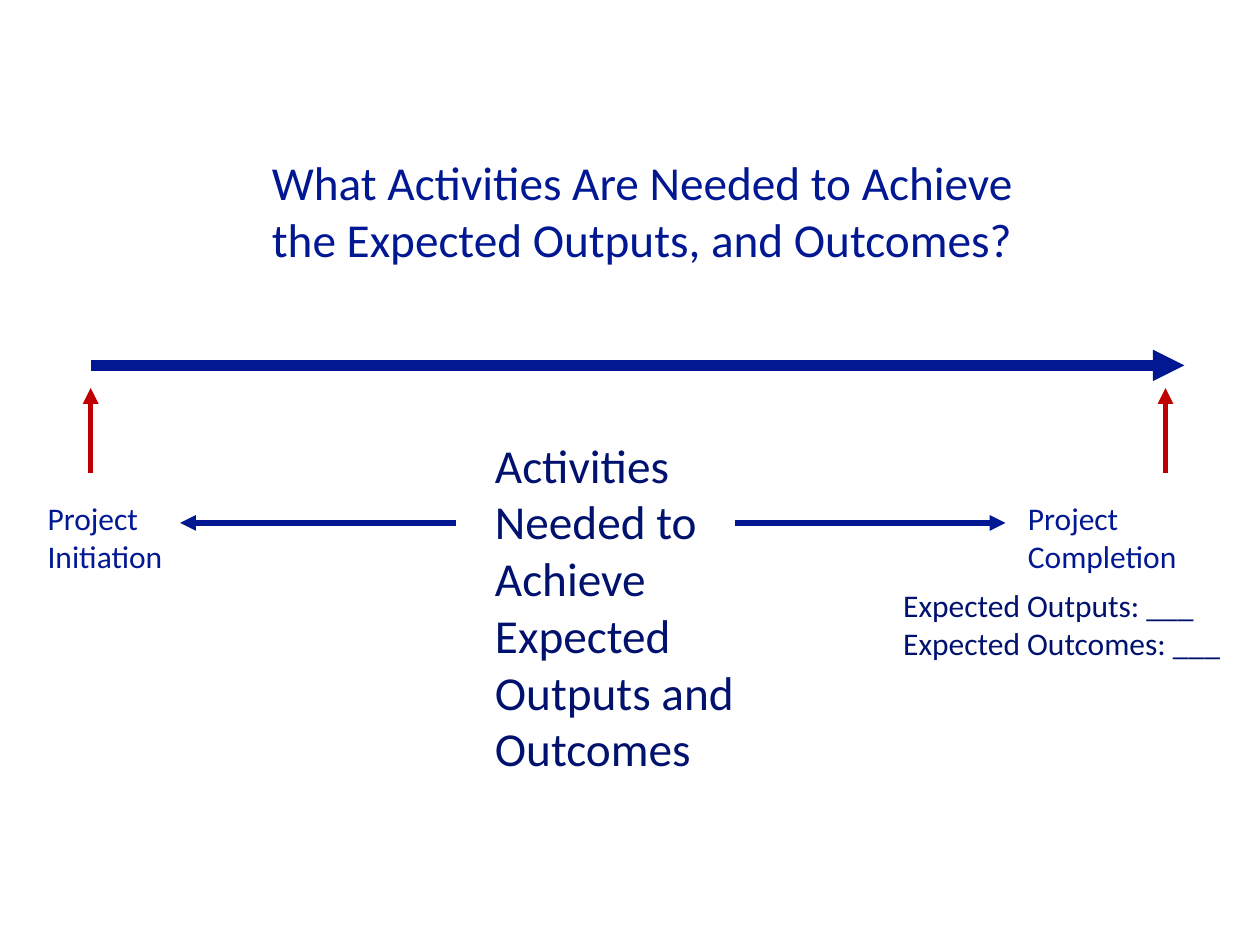
from dataclasses import dataclass

import lxml.etree
import pptx
import pptx.dml.color
import pptx.enum.shapes
import pptx.enum.text
import pptx.oxml.ns
import pptx.util

BLUE = "011892"
NAVY = "01126E"
RED = "C00000"

TIMELINE_Y = 208.8
SPAN_Y = 298.8
MARKER_BOTTOM, MARKER_TOP = 270, 221.76
START_X, COMPLETION_X = 51.84, 666
LABEL_TOP, LABEL_HEIGHT = 281.52, 51.12


@dataclass(frozen=True)
class Arrow:
    start: tuple[float, float]
    end: tuple[float, float]
    color: str = BLUE
    width: float = 3


@dataclass(frozen=True)
class Label:
    text: str
    left: float
    top: float
    width: float
    height: float
    size: float = 18
    color: str = BLUE


ARROWS = [
    Arrow((START_X, TIMELINE_Y), (676.8, TIMELINE_Y), width=6),
    *(Arrow((x, MARKER_BOTTOM), (x, MARKER_TOP), RED) for x in (START_X, COMPLETION_X)),
    Arrow((260.64, SPAN_Y), (102.96, SPAN_Y)),
    Arrow((419.76, SPAN_Y), (574.56, SPAN_Y)),
]

LABELS = [
    Label("Project Initiation", 20.16, LABEL_TOP, 98.64, LABEL_HEIGHT),
    Label("Project Completion", 580.32, LABEL_TOP, 138.24, LABEL_HEIGHT),
    Label(
        "What Activities Are Needed to Achieve the Expected Outputs, and Outcomes?",
        148.32, 84.24, 465.12, 72.72, size=27,
    ),
    Label(
        "Activities Needed to Achieve Expected Outputs and Outcomes",
        275.76, 245.52, 176.4, 203.76, size=27, color=NAVY,
    ),
    Label(
        "Expected Outputs: ___\nExpected Outcomes: ___",
        509.04, 331.2, 204.48, 66.96, color=NAVY,
    ),
]


def rgb(color: str) -> pptx.dml.color.RGBColor:
    return pptx.dml.color.RGBColor.from_string(color)


def write_text(text_frame, text: str, *, size: float, color: str, font: str = "Calibri") -> None:
    text_frame.text = text
    for paragraph in text_frame.paragraphs:
        for run in paragraph.runs:
            run.font.name = font
            run.font.size = pptx.util.Pt(size)
            run.font.color.rgb = rgb(color)


def draw_arrow(slide, arrow: Arrow) -> None:
    connector = slide.shapes.add_connector(
        pptx.enum.shapes.MSO_CONNECTOR.STRAIGHT,
        *(pptx.util.Pt(value) for value in (*arrow.start, *arrow.end)),
    )
    connector.line.color.rgb = rgb(arrow.color)
    connector.line.width = pptx.util.Pt(arrow.width)
    line = connector.line._get_or_add_ln()
    lxml.etree.SubElement(line, pptx.oxml.ns.qn("a:tailEnd"), type="triangle")
    lxml.etree.SubElement(connector._element.spPr, pptx.oxml.ns.qn("a:effectLst"))


def draw_label(slide, label: Label) -> None:
    box = slide.shapes.add_textbox(
        *(pptx.util.Pt(value) for value in (label.left, label.top, label.width, label.height))
    )
    box.text_frame.word_wrap = True
    box.text_frame.auto_size = pptx.enum.text.MSO_AUTO_SIZE.SHAPE_TO_FIT_TEXT
    write_text(box.text_frame, label.text, size=label.size, color=label.color)


def main() -> None:
    """Build the project activity timeline slide."""
    presentation = pptx.Presentation()
    presentation.slide_width = pptx.util.Pt(720)
    presentation.slide_height = pptx.util.Pt(540)
    slide = presentation.slides.add_slide(presentation.slide_layouts[6])
    for arrow in ARROWS:
        draw_arrow(slide, arrow)
    for label in LABELS:
        draw_label(slide, label)
    presentation.save("out.pptx")


if __name__ == "__main__":
    main()
